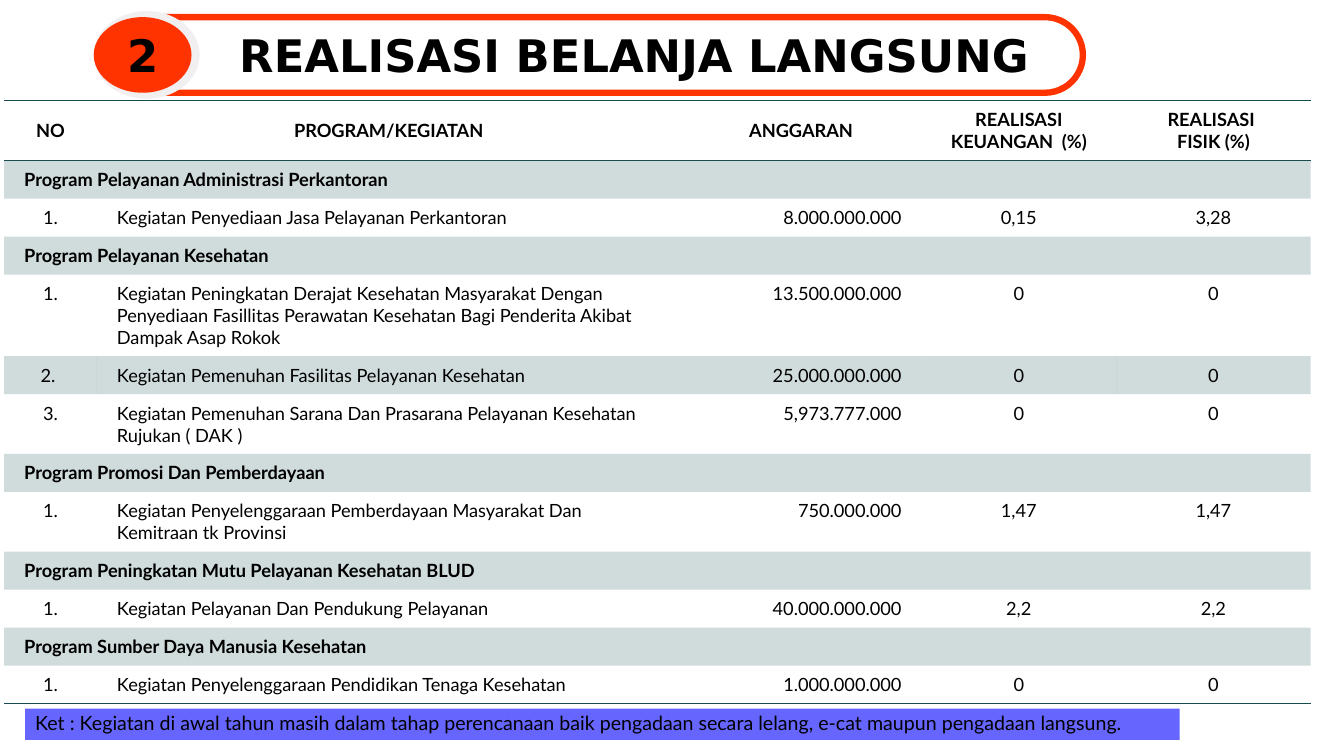
from dataclasses import dataclass

from lxml.etree import SubElement
from pptx import Presentation
from pptx.dml.color import RGBColor
from pptx.enum.shapes import MSO_SHAPE as Shape
from pptx.enum.text import MSO_ANCHOR as Anchor, MSO_AUTO_SIZE as AutoSize, PP_ALIGN as Align
from pptx.oxml import parse_xml
from pptx.oxml.ns import nsdecls, qn
from pptx.util import Pt

PX = 9144  # 100 px to the inch
NO_STYLE = "{2D5ABB26-0587-4C30-8999-92F81FD0307C}"


@dataclass(frozen=True)
class Theme:
    heading_font: str = "DejaVu Sans"
    body_font: str = "Lato"
    heading_size: int = 32
    table_size: int = 13
    note_size: int = 14
    ink: str = "000000"
    accent: str = "FF3300"
    halo: str = "F1EFF0"
    teal: str = "164B4F"
    note: str = "6666FF"


def px(*lengths):
    return [length * PX for length in lengths]


def write(frame, text, *, font, size, color, bold=False, align=Align.LEFT,
          anchor=Anchor.TOP, insets=(10, 5), spacing=None):
    """Fill a text frame, one paragraph for each line of text."""
    frame.word_wrap = True
    frame.vertical_anchor = anchor
    frame.margin_left = frame.margin_right = insets[0] * PX
    frame.margin_top = frame.margin_bottom = insets[1] * PX
    frame.text = text
    for paragraph in frame.paragraphs:
        paragraph.alignment = align
        if spacing:
            paragraph.line_spacing = spacing
        for run in paragraph.runs:
            run.font.name, run.font.size, run.font.bold = font, Pt(size), bold
            run.font.color.rgb = RGBColor.from_string(color)


class SlideBuilder:
    def __init__(self, deck, theme):
        self.theme = theme
        self.slide = deck.slides.add_slide(deck.slide_layouts[5])

    def title(self, text, box):
        heading = self.slide.shapes.title
        heading.left, heading.top, heading.width, heading.height = px(*box)
        heading.text_frame.auto_size = AutoSize.NONE
        write(heading.text_frame, text, font=self.theme.heading_font,
              size=self.theme.heading_size, color=self.theme.ink, bold=True,
              align=Align.CENTER, insets=(15, 7))

    def shape(self, kind, box, fill=None, line=None, line_width=0):
        shape = self.slide.shapes.add_shape(kind, *px(*box))
        shape.shadow.inherit = False
        if fill:
            shape.fill.solid()
            shape.fill.fore_color.rgb = RGBColor.from_string(fill)
        else:
            shape.fill.background()
        if line:
            shape.line.color.rgb = RGBColor.from_string(line)
            shape.line.width = Pt(line_width)
        else:
            shape.line.fill.background()
        return shape

    def table(self, header, rows, left, top, widths, heights):
        """A plain str in rows is a group heading across all columns."""
        frame = self.slide.shapes.add_table(
            len(heights), len(widths), *px(left, top, sum(widths), sum(heights)))
        table = frame.table
        table.first_row = table.horz_banding = False
        next(frame.element.iter(qn("a:tableStyleId"))).text = NO_STYLE
        for column, width in zip(table.columns, widths):
            column.width = width * PX
        for row, height in zip(table.rows, heights):
            row.height = height * PX

        aligns = (Align.CENTER, Align.LEFT, Align.RIGHT, Align.CENTER, Align.CENTER)
        last = len(rows)
        for r, content in enumerate([header, *rows]):
            is_header, is_group = r == 0, isinstance(content, str)
            edges = {0: ("lnT", "lnB"), last: ("lnB",)}.get(r, ())
            for c in range(len(widths)):
                self.style_cell(table.cell(r, c), shaded=r % 2 == 1, edges=edges)
            if is_group:
                table.cell(r, 0).merge(table.cell(r, len(widths) - 1))
            for c, text in enumerate([content] if is_group else content):
                align = Align.CENTER if is_header else Align.LEFT if is_group else aligns[c]
                self.cell_text(table.cell(r, c), text, align, is_header or is_group,
                               Anchor.MIDDLE if is_header else Anchor.TOP)

    def cell_text(self, cell, text, align, bold, anchor):
        write(cell.text_frame, text, font=self.theme.body_font,
              size=self.theme.table_size, color=self.theme.ink, bold=bold, align=align)
        cell.vertical_anchor = anchor
        cell.margin_left = cell.margin_right = 20 * PX
        cell.margin_top = cell.margin_bottom = 8 * PX

    def style_cell(self, cell, shaded, edges):
        if shaded:
            cell.fill.solid()
            cell.fill.fore_color.rgb = RGBColor.from_string(self.theme.teal)
        else:
            cell.fill.background()
        properties = cell._tc.get_or_add_tcPr()
        for color in properties.iter(qn("a:srgbClr")):
            SubElement(color, qn("a:alpha"), val="20000")
        for position, edge in enumerate(edges):
            properties.insert(position, parse_xml(
                f'<a:{edge} {nsdecls("a")} w="{Pt(1)}"><a:solidFill>'
                f'<a:srgbClr val="{self.theme.teal}"/></a:solidFill></a:{edge}>'))


HEADER = ("NO", "PROGRAM/KEGIATAN", "ANGGARAN", "REALISASI KEUANGAN  (%)",
          "REALISASI \nFISIK (%)")
ROWS = [
    "Program Pelayanan Administrasi Perkantoran",
    ("1.", "Kegiatan Penyediaan Jasa Pelayanan Perkantoran", "8.000.000.000", "0,15", "3,28"),
    "Program Pelayanan Kesehatan",
    ("1.", "Kegiatan Peningkatan Derajat Kesehatan Masyarakat Dengan Penyediaan Fasillitas "
     "Perawatan Kesehatan Bagi Penderita Akibat Dampak Asap Rokok",
     "13.500.000.000", "0", "0"),
    ("2. ", "Kegiatan Pemenuhan Fasilitas Pelayanan Kesehatan", "25.000.000.000", "0", "0"),
    ("3.", "Kegiatan Pemenuhan Sarana Dan Prasarana Pelayanan Kesehatan Rujukan ( DAK )",
     "5,973.777.000", "0", "0"),
    "Program Promosi Dan Pemberdayaan",
    ("1.", "Kegiatan Penyelenggaraan Pemberdayaan Masyarakat Dan Kemitraan tk Provinsi",
     "750.000.000", "1,47", "1,47"),
    "Program Peningkatan Mutu Pelayanan Kesehatan BLUD",
    ("1.", "Kegiatan Pelayanan Dan Pendukung Pelayanan", "40.000.000.000", "2,2", "2,2"),
    "Program Sumber Daya Manusia Kesehatan",
    ("1.", "Kegiatan Penyelenggaraan Pendidikan Tenaga Kesehatan", "1.000.000.000", "0", "0"),
]
ONE_LINE, TWO_LINES, THREE_LINES = 36, 58, 80
HEIGHTS = [TWO_LINES, *[ONE_LINE] * 3, THREE_LINES, ONE_LINE, TWO_LINES, ONE_LINE,
           TWO_LINES, *[ONE_LINE] * 4]


def main():
    deck = Presentation()
    deck.slide_width, deck.slide_height = px(1333, 750)
    theme = Theme()
    builder = SlideBuilder(deck, theme)

    builder.title("REALISASI BELANJA LANGSUNG ", (174, 20, 926, 69))
    banner = builder.shape(Shape.ROUNDED_RECTANGLE, (109, 17, 965, 75),
                           line=theme.accent, line_width=4.5)
    banner.adjustments[0] = 0.5
    builder.shape(Shape.OVAL, (93, 11, 105, 87), fill=theme.halo)
    number = builder.shape(Shape.OVAL, (93, 17, 97, 75), fill=theme.accent)
    write(number.text_frame, "2", font=theme.heading_font, size=theme.heading_size,
          color=theme.ink, bold=True, align=Align.CENTER, anchor=Anchor.MIDDLE)

    builder.table(HEADER, ROWS, 4, 100, (92, 579, 239, 193, 193), HEIGHTS)

    remark = builder.shape(Shape.RECTANGLE, (25, 703, 1145, 31), fill=theme.note)
    write(remark.text_frame,
          "Ket : Kegiatan di awal tahun masih dalam tahap perencanaan baik pengadaan "
          "secara lelang, e-cat maupun pengadaan langsung.",
          font=theme.body_font, size=theme.note_size, color=theme.ink, spacing=0.9)
    deck.save("out.pptx")


if __name__ == "__main__":
    main()
